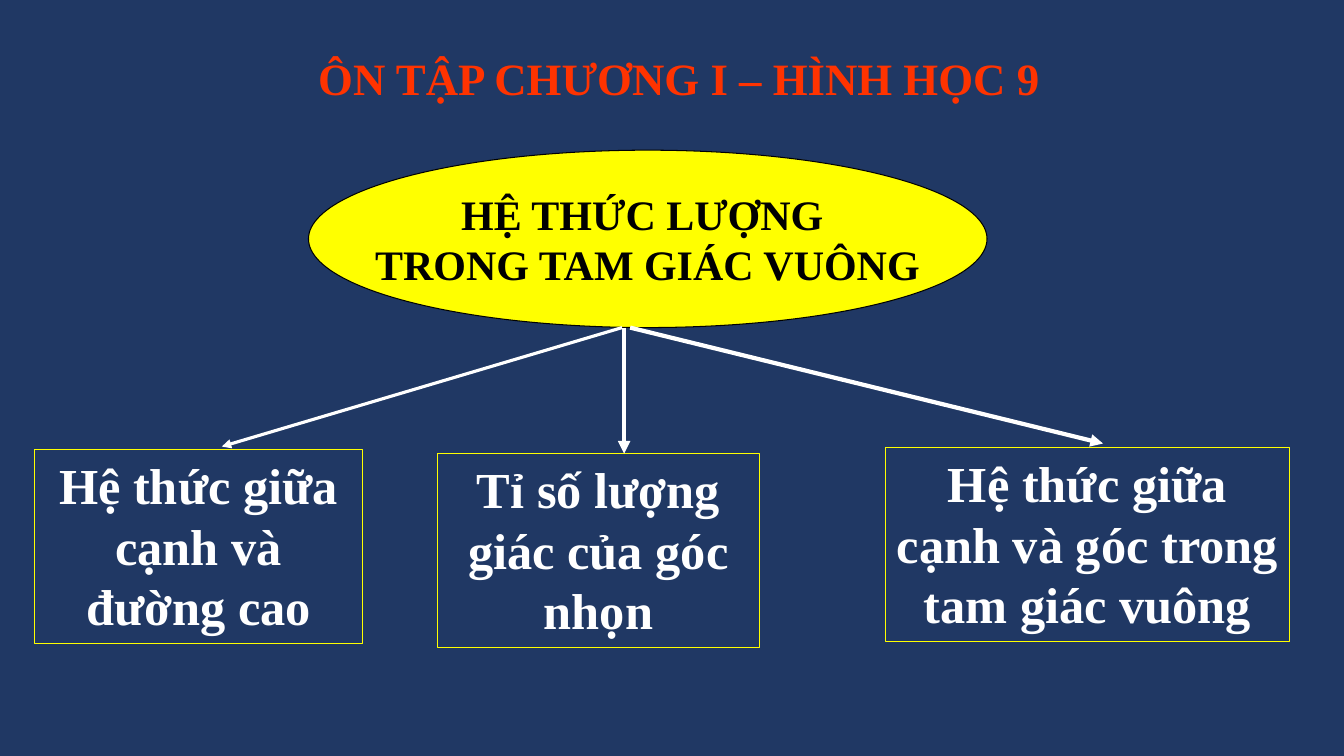
from dataclasses import dataclass

from lxml.etree import SubElement
from pptx import Presentation
from pptx.dml.color import RGBColor
from pptx.enum.shapes import MSO_CONNECTOR, MSO_SHAPE
from pptx.enum.text import MSO_ANCHOR as Anchor, MSO_AUTO_SIZE as AutoSize, PP_ALIGN as Align
from pptx.oxml.ns import qn
from pptx.shapes.autoshape import Shape
from pptx.slide import Slide
from pptx.util import Inches, Pt

COLORS = {
    "background": "203864",
    "title": "FF3300",
    "yellow": "FFFF00",
    "black": "000000",
    "white": "FFFFFF",
}
FONT = "Times New Roman"


@dataclass(frozen=True)
class Topic:
    text: str
    left: float
    top: float
    width: float


@dataclass(frozen=True)
class Arrow:
    start: tuple[float, float]
    end: tuple[float, float]
    weight: float


TOPIC_HEIGHT = 1.92
TOPICS = [
    Topic("Hệ thức giữa cạnh và đường cao", 0.34, 4.46, 3.26),
    Topic("Tỉ số lượng giác của góc nhọn", 4.34, 4.5, 3.19),
    Topic("Hệ thức giữa cạnh và góc trong tam giác vuông", 8.78, 4.44, 4.01),
]
ARROWS = [
    Arrow((6.19, 3.25), (6.19, 4.5), 3),
    Arrow((6.25, 3.25), (10.94, 4.4), 3),
    Arrow((6.17, 3.25), (2.2, 4.43), 2.25),
]


def rgb(name: str) -> RGBColor:
    return RGBColor.from_string(COLORS[name])


def write_text(shape: Shape, text: str, *, size: float, color: str,
               anchor: Anchor = Anchor.TOP, wrap: bool = True) -> None:
    """Fill the shape with bold centred text, one paragraph per line."""
    frame = shape.text_frame
    frame.word_wrap = wrap
    frame.auto_size = AutoSize.SHAPE_TO_FIT_TEXT if wrap else AutoSize.NONE
    frame.vertical_anchor = anchor
    frame.text = text
    for paragraph in frame.paragraphs:
        paragraph.alignment = Align.CENTER
        for run in paragraph.runs:
            run.font.name = FONT
            run.font.size = Pt(size)
            run.font.bold = True
            run.font.color.rgb = rgb(color)


def add_outlined(slide: Slide, preset: MSO_SHAPE, left: float, top: float,
                 width: float, height: float, line: str, fill: str | None = None) -> Shape:
    shape = slide.shapes.add_shape(
        preset, Inches(left), Inches(top), Inches(width), Inches(height))
    shape.shadow.inherit = False
    if fill:
        shape.fill.solid()
        shape.fill.fore_color.rgb = rgb(fill)
    else:
        shape.fill.background()
    shape.line.color.rgb = rgb(line)
    shape.line.width = Pt(0.75)
    return shape


def add_arrow(slide: Slide, arrow: Arrow) -> None:
    connector = slide.shapes.add_connector(
        MSO_CONNECTOR.STRAIGHT, *map(Inches, arrow.start + arrow.end))
    connector.line.color.rgb = rgb("white")
    connector.line.width = Pt(arrow.weight)
    SubElement(connector.line._get_or_add_ln(), qn("a:tailEnd"), type="triangle")
    SubElement(connector._element.spPr, qn("a:effectLst"))


def main() -> None:
    deck = Presentation()
    deck.slide_width, deck.slide_height = Inches(13.33), Inches(7.5)
    slide = deck.slides.add_slide(deck.slide_layouts[6])
    slide.background.fill.solid()
    slide.background.fill.fore_color.rgb = rgb("background")

    chapter = add_outlined(slide, MSO_SHAPE.OVAL, 3.06, 1.49, 6.73, 1.76, "black", "yellow")
    write_text(chapter, "HỆ THỨC LƯỢNG \nTRONG TAM GIÁC VUÔNG", size=30, color="black",
               anchor=Anchor.MIDDLE, wrap=False)

    for topic in TOPICS:
        box = add_outlined(slide, MSO_SHAPE.RECTANGLE, topic.left, topic.top,
                           topic.width, TOPIC_HEIGHT, "yellow")
        write_text(box, topic.text, size=36, color="white")

    for arrow in ARROWS:
        add_arrow(slide, arrow)

    title = slide.shapes.add_textbox(Inches(2.86), Inches(0.45), Inches(7.64), Inches(0.64))
    write_text(title, " ÔN TẬP CHƯƠNG I – HÌNH HỌC 9", size=32, color="title")

    deck.save("out.pptx")


if __name__ == "__main__":
    main()
